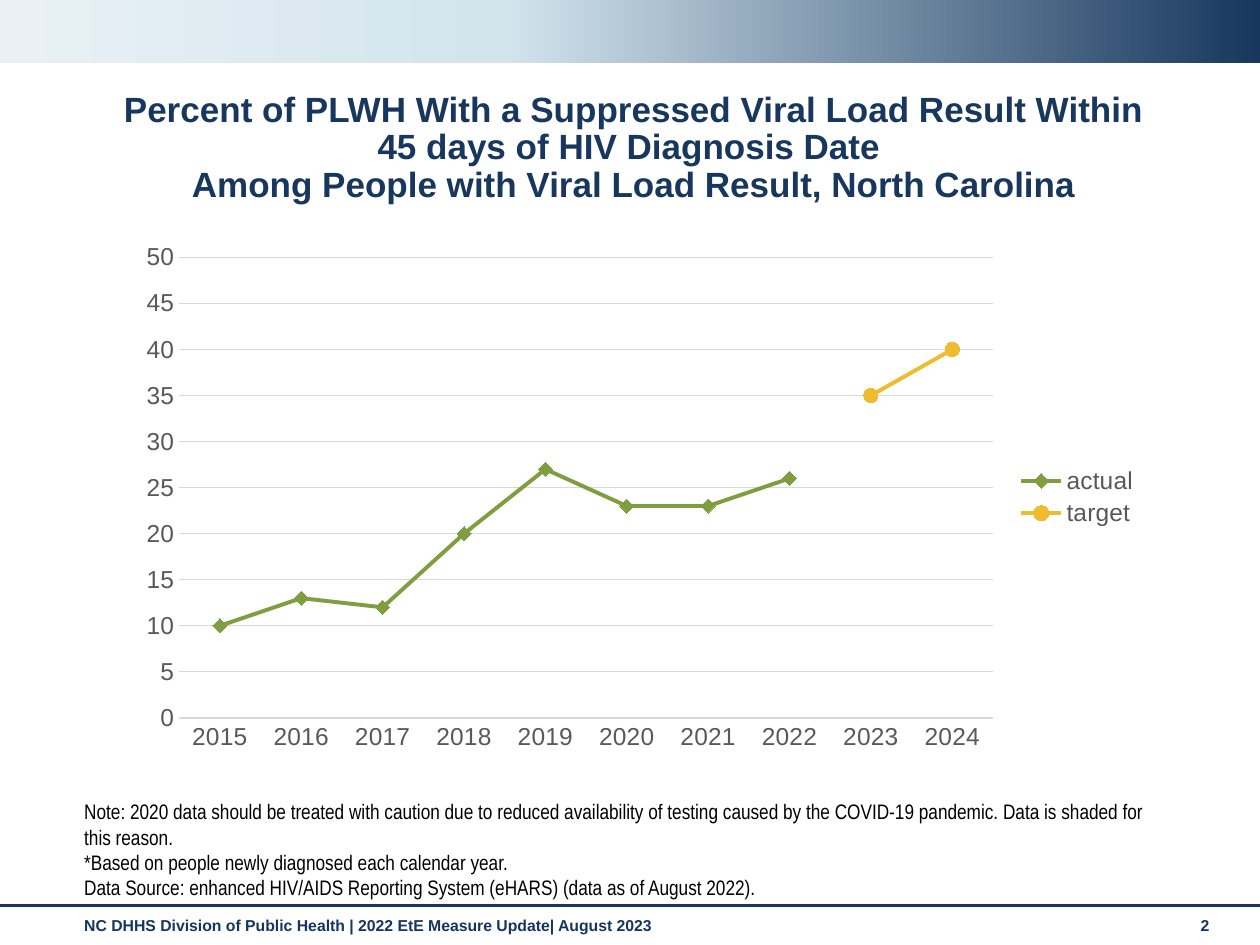
import copy

from lxml import etree
from pptx import Presentation
from pptx.chart import data
from pptx.dml.color import RGBColor
from pptx.enum import chart as charts, shapes, text
from pptx.oxml import ns
from pptx.util import Inches, Pt

NAVY = RGBColor(0x17, 0x37, 0x5E)
FOOTER_NAVY = RGBColor(0x15, 0x36, 0x5E)
SKY = RGBColor(0xD3, 0xE4, 0xED)
PALE = RGBColor(0xE9, 0xF1, 0xF6)
BLACK = RGBColor(0, 0, 0)
GRAY = RGBColor(0x59, 0x59, 0x59)
LIGHT_GRAY = RGBColor(0xD9, 0xD9, 0xD9)
GREEN = RGBColor(0x7F, 0x9E, 0x3F)
GOLD = RGBColor(0xEF, 0xBB, 0x2F)

YEARS = [str(year) for year in range(2015, 2025)]
ACTUAL = [10, 13, 12, 20, 27, 23, 23, 26, None, None]
TARGET = [None] * 8 + [35, 40]


def add_text(slide, box, paragraphs, size, color=BLACK, font="Arial", bold=False,
             align=None, anchor=text.MSO_ANCHOR.TOP, spacing=None):
    frame = slide.shapes.add_textbox(*map(Inches, box)).text_frame
    frame.word_wrap = True
    frame.vertical_anchor = anchor
    for index, content in enumerate(paragraphs):
        paragraph = frame.add_paragraph() if index else frame.paragraphs[0]
        paragraph.text = content
        paragraph.alignment = align
        paragraph.line_spacing = spacing
        for run in paragraph.runs:
            style_font(run.font, size, color, font)
            run.font.bold = bold


def style_font(font, size, color, name="Arial"):
    font.size = Pt(size)
    font.name = name
    font.color.rgb = color


def style_line(line, color, width):
    line.color.rgb = color
    line.width = Pt(width)


def add_banner(slide, box):
    banner = slide.shapes.add_shape(shapes.MSO_SHAPE.RECTANGLE, *map(Inches, box))
    banner.shadow.inherit = False
    banner.line.fill.background()
    banner.fill.gradient()
    banner.fill.gradient_angle = 180
    stop_list = banner._element.spPr.find(".//" + ns.qn("a:gsLst"))
    stop_list.append(copy.deepcopy(stop_list[-1]))
    for stop, position, color in zip(banner.fill.gradient_stops, (0, 0.6, 1),
                                     (NAVY, SKY, PALE)):
        stop.position = position
        stop.color.rgb = color


def add_footer(slide, box):
    left, top, width, height = box
    rule = slide.shapes.add_connector(shapes.MSO_CONNECTOR.STRAIGHT, Inches(left),
                                      Inches(top), Inches(left + width), Inches(top))
    style_line(rule.line, NAVY, 1.75)
    etree.SubElement(rule._element.spPr, ns.qn("a:effectLst"))
    label_top = top + 0.03
    for label, offset, label_width in (
            ("NC DHHS Division of Public Health | 2022 EtE Measure Update| August 2023",
             0.57, 8.74),
            ("2", 9.43, 0.44)):
        add_text(slide, (left + offset, label_top, label_width, height - 0.03),
                 [label], 9, FOOTER_NAVY, bold=True)


def add_trend_chart(slide, box):
    trend = data.CategoryChartData(number_format="0")
    trend.categories = YEARS
    trend.add_series("actual", ACTUAL)
    trend.add_series("target", TARGET)
    chart = slide.shapes.add_chart(charts.XL_CHART_TYPE.LINE_MARKERS,
                                   *map(Inches, box), trend).chart
    chart.has_title = False
    style_font(chart.font, 14, BLACK)
    chart.has_legend = True
    chart.legend.position = charts.XL_LEGEND_POSITION.RIGHT
    chart.legend.include_in_layout = False
    style_font(chart.legend.font, 14, GRAY)

    years, percent = chart.category_axis, chart.value_axis
    for axis in (years, percent):
        axis.major_tick_mark = axis.minor_tick_mark = charts.XL_TICK_MARK.NONE
        style_font(axis.tick_labels.font, 14, GRAY)
    style_line(years.format.line, LIGHT_GRAY, 0.75)
    percent.format.line.fill.background()
    percent.minimum_scale, percent.maximum_scale, percent.major_unit = 0, 50, 5
    percent.tick_labels.number_format = "0"
    percent.tick_labels.number_format_is_linked = False
    percent.has_major_gridlines = True
    style_line(percent.major_gridlines.format.line, LIGHT_GRAY, 0.75)

    plot = chart.plots[0]
    plot.vary_by_categories = False
    markers = (charts.XL_MARKER_STYLE.DIAMOND, charts.XL_MARKER_STYLE.CIRCLE)
    for series, color, marker in zip(plot.series, (GREEN, GOLD), markers):
        series.smooth = False
        style_line(series.format.line, color, 2.25)
        series.marker.style = marker
        series.marker.size = 8
        series.marker.format.fill.solid()
        series.marker.format.fill.fore_color.rgb = color
        series.marker.format.line.fill.background()


def main():
    deck = Presentation()
    deck.slide_width, deck.slide_height = Inches(10), Inches(7.5)
    slide = deck.slides.add_slide(deck.slide_layouts[6])
    add_banner(slide, (0, 0, 10, 0.5))
    add_footer(slide, (0, 7.19, 10, 0.31))
    add_text(slide, (0.74, 0.68, 8.58, 0.6),
             ["Percent of PLWH With a Suppressed Viral Load Result Within 45 days of "
              "HIV Diagnosis Date \vAmong People with Viral Load Result, North Carolina"],
             20, NAVY, bold=True, align=text.PP_ALIGN.CENTER, spacing=0.9)
    add_text(slide, (0.57, 6.83, 8.74, 0.36),
             ["Note: 2020 data should be treated with caution due to reduced availability "
              "of testing caused by the COVID-19 pandemic. Data is shaded for this reason.",
              "*Based on people newly diagnosed each calendar year.",
              "Data Source: enhanced HIV/AIDS Reporting System (eHARS) "
              "(data as of August 2022)."],
             12, font="Arial Narrow", anchor=text.MSO_ANCHOR.BOTTOM)
    add_trend_chart(slide, (1, 1.85, 8.14, 4.19))
    deck.save("out.pptx")


if __name__ == "__main__":
    main()
